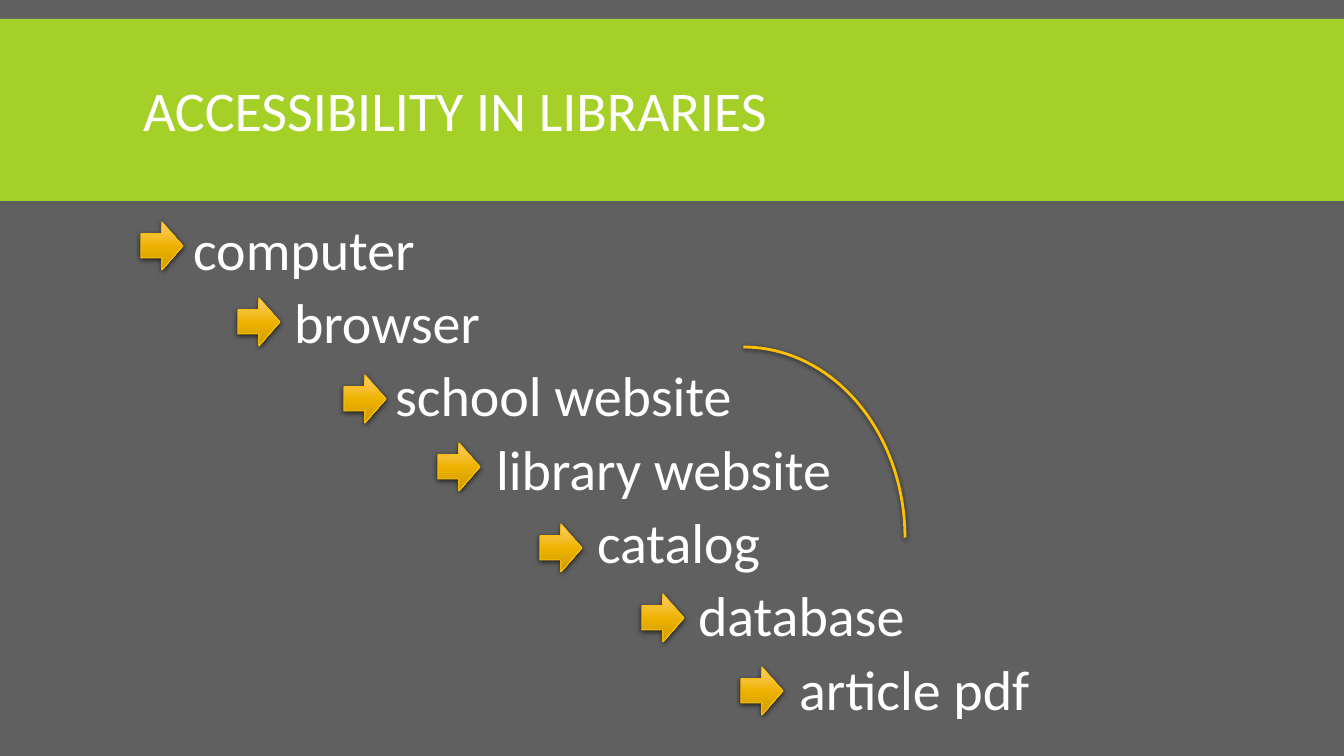
import pptx
import pptx.util
import pptx.oxml
import pptx.oxml.ns
import pptx.dml.color
import pptx.enum.shapes
import pptx.enum.text

RGB = pptx.dml.color.RGBColor
GREY = RGB(0x60, 0x60, 0x60)
LIME = RGB(0xA5, 0xD0, 0x28)
GOLD = RGB(0xFF, 0xC0, 0x00)
WHITE = RGB(0xFF, 0xFF, 0xFF)
SHAPE = pptx.enum.shapes.MSO_SHAPE
ANCHOR = pptx.enum.text.MSO_ANCHOR
NS = pptx.oxml.ns.nsdecls("a")
SCALE = 914400 / 100.8
STEP = 101

SHADE = f"""<a:gradFill {NS} rotWithShape="1"><a:gsLst>
<a:gs pos="0"><a:srgbClr val="FFCE77"/></a:gs>
<a:gs pos="50000"><a:srgbClr val="EEB300"/></a:gs>
<a:gs pos="100000"><a:srgbClr val="CC9A00"/></a:gs>
</a:gsLst><a:lin ang="5400000" scaled="0"/></a:gradFill>"""
SHADOW = f"""<a:effectLst {NS}>
<a:outerShdw blurRad="50800" dist="15240" dir="5400000" algn="ctr" rotWithShape="0">
<a:srgbClr val="000000"><a:alpha val="68000"/></a:srgbClr>
</a:outerShdw></a:effectLst>"""


def px(*nums):
    """Turn pixels into EMU."""
    return [pptx.util.Emu(round(n * SCALE)) for n in nums]


def write(par, text, size=40, color=WHITE, space=1.0, before=0, after=0, indent=0):
    run = par.add_run()
    run.text = text
    run.font.name = "Calibri"
    run.font.size = pptx.util.Pt(size)
    run.font.color.rgb = color
    par.alignment = pptx.enum.text.PP_ALIGN.LEFT
    par.line_spacing = space
    par.space_before = pptx.util.Pt(before)
    par.space_after = pptx.util.Pt(after)
    props = par._p.get_or_add_pPr()
    props.set("marL", str(px(indent)[0]))
    props.set("indent", "0")
    props.append(pptx.oxml.parse_xml(f"<a:buNone {NS}/>"))


deck = pptx.Presentation()
deck.slide_width, deck.slide_height = px(1344, 756)
slide = deck.slides.add_slide(deck.slide_layouts[1])
slide.background.fill.solid()
slide.background.fill.fore_color.rgb = GREY
title, body = slide.placeholders[0], slide.placeholders[1]

# Banner behind the title
band = slide.shapes.add_shape(SHAPE.RECTANGLE, *px(0, 19, 1344, 182))
band.shadow.inherit = False
band.fill.solid()
band.fill.fore_color.rgb = LIME
band.line.fill.background()
title.element.addprevious(band.element)

# Title and body
for holder, box, anchor in (
    (title, (133, 31, 1079, 166), ANCHOR.MIDDLE),
    (body, (183, 222, 1199, 516), ANCHOR.TOP),
):
    holder.left, holder.top, holder.width, holder.height = px(*box)
    frame = holder.text_frame
    frame.word_wrap = True
    frame.auto_size = pptx.enum.text.MSO_AUTO_SIZE.NONE
    frame.vertical_anchor = anchor

write(title.text_frame.paragraphs[0], "ACCESSIBILITY IN LIBRARIES", space=0.85)

# Each step goes one stop further right
steps = [
    ("computer", 141, 222),
    ("browser", 238, 298),
    ("school website", 344, 375),
    ("library website", 438, 443),
    ("catalog", 540, 524),
    ("database", 642, 594),
    ("article pdf", 741, 667),
]
marks = []
for i, (word, left, top) in enumerate(steps):
    frame = body.text_frame
    par = frame.add_paragraph() if i else frame.paragraphs[0]
    write(par, word, space=0.8, before=12, after=2, indent=i * STEP)
    marks.append((SHAPE.RIGHT_ARROW, (left, top, 42, 48), 0.75))
marks.append((SHAPE.ARC, (582, 347, 323, 381), 2))

# Arrows and arc
for kind, box, width in marks:
    mark = slide.shapes.add_shape(kind, *px(*box))
    props = mark.element.spPr
    if kind == SHAPE.ARC:
        mark.fill.background()
    else:
        props.append(pptx.oxml.parse_xml(SHADE))
    mark.line.color.rgb = GOLD
    mark.line.width = pptx.util.Pt(width)
    props.append(pptx.oxml.parse_xml(SHADOW))

deck.save("out.pptx")
